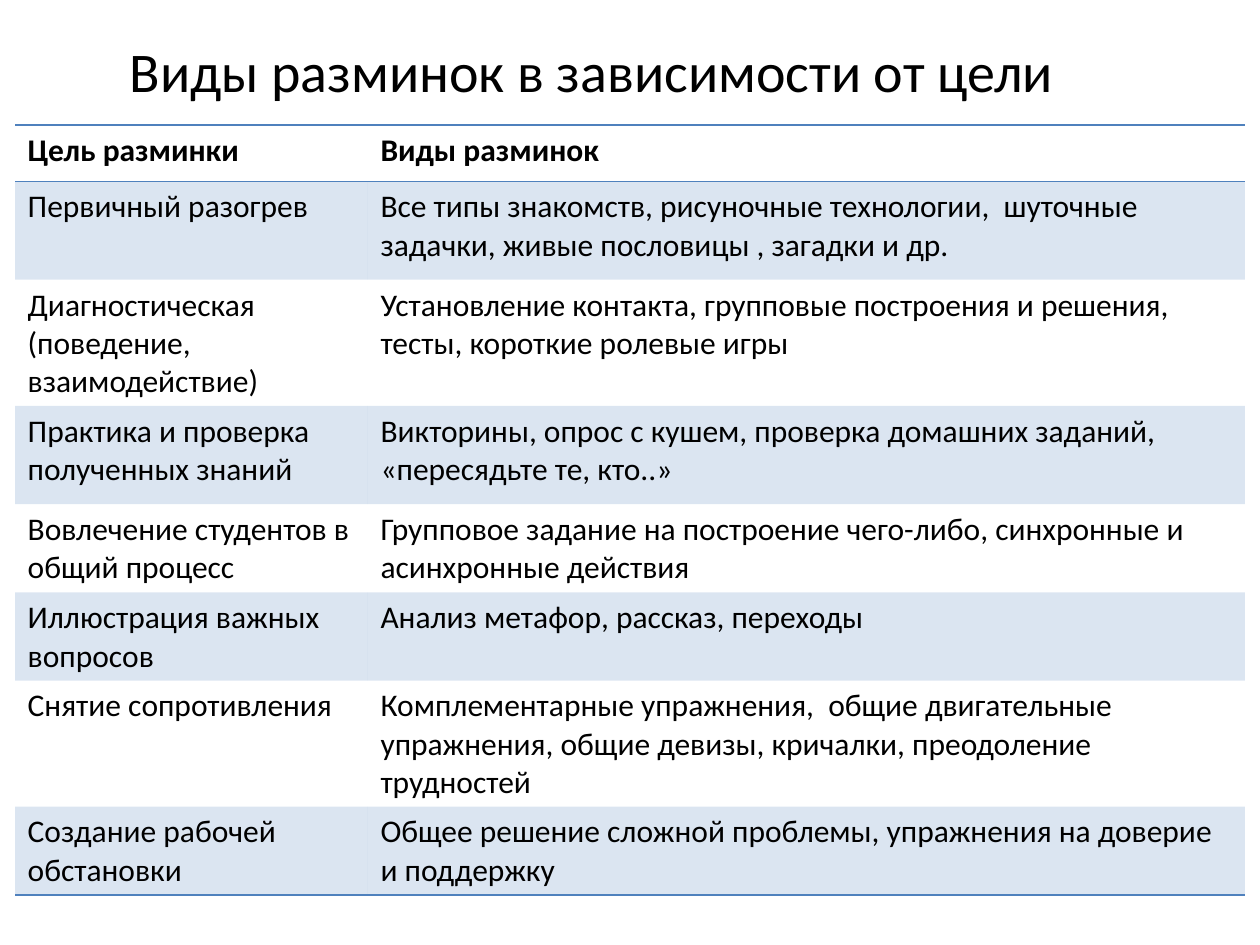
from lxml import etree
from pptx import Presentation
from pptx.dml.color import RGBColor
from pptx.enum.text import MSO_ANCHOR, PP_ALIGN
from pptx.oxml.ns import qn
from pptx.util import Inches, Pt

CENTER = PP_ALIGN.CENTER
MIDDLE = MSO_ANCHOR.MIDDLE
FONT = "Calibri"
INK = "000000"
ACCENT = "4F81BD"
BAND_ALPHA = 20
PLAIN_STYLE = "{2D5ABB26-0587-4C30-8999-92F81FD0307C}"

SLIDE_SIZE = (10, 7.5)
TITLE_BOX = (0.2, 0.21, 9, 0.69)
TABLE_BOX = (0.12, 0.99, 9.76, 6.12)
COLUMN_WIDTHS = (2.8, 6.96)
ROW_HEIGHTS = (0.45, 0.78, 0.89, 0.78, 0.64, 0.65, 0.94, 0.45)

TITLE = "Виды разминок в зависимости от цели"
WARMUPS = (
    ("Цель разминки", "Виды разминок"),
    ("Первичный разогрев",
     "Все типы знакомств, рисуночные технологии,  шуточные задачки, "
     "живые пословицы , загадки и др."),
    ("Диагностическая (поведение, взаимодействие)",
     "Установление контакта, групповые построения и решения, тесты, "
     "короткие ролевые игры"),
    ("Практика и проверка полученных знаний",
     "Викторины, опрос с кушем, проверка домашних заданий,  "
     "«пересядьте те, кто..»"),
    ("Вовлечение студентов в общий процесс",
     "Групповое задание на построение чего-либо, синхронные и "
     "асинхронные действия"),
    ("Иллюстрация важных вопросов", "Анализ метафор, рассказ, переходы"),
    ("Снятие сопротивления",
     "Комплементарные упражнения,  общие двигательные упражнения, "
     "общие девизы, кричалки, преодоление трудностей"),
    ("Создание рабочей обстановки",
     "Общее решение сложной проблемы, упражнения на доверие и поддержку"),
)


def rgb(value):
    """Turn a hex string into a colour."""
    return RGBColor.from_string(value)


def write(frame, text, size, bold=False):
    """Write one run of text and return its paragraph."""
    paragraph = frame.paragraphs[0]
    run = paragraph.add_run()
    run.text = text
    for name, value in {"name": FONT, "size": Pt(size), "bold": bold}.items():
        setattr(run.font, name, value)
    run.font.color.rgb = rgb(INK)
    return paragraph


def rule(cell, sides):
    """Draw accent rules on the given sides of a cell."""
    properties = cell._tc.get_or_add_tcPr()
    for position, side in enumerate(sides):
        line = etree.Element(qn(f"a:ln{side}"), w=str(Pt(1)))
        fill = etree.SubElement(line, qn("a:solidFill"))
        etree.SubElement(fill, qn("a:srgbClr"), val=ACCENT)
        properties.insert(position, line)


def shade(cell, banded):
    """Give a cell a translucent accent band or no fill."""
    if not banded:
        cell.fill.background()
        return
    cell.fill.solid()
    cell.fill.fore_color.rgb = rgb(ACCENT)
    tint = cell._tc.tcPr.find(".//" + qn("a:srgbClr"))
    etree.SubElement(tint, qn("a:alpha"), val=str(BAND_ALPHA * 1000))


def add_title(slide, box):
    """Place the centred heading in its box."""
    frame = slide.shapes.add_textbox(*map(Inches, box)).text_frame
    for name, value in {"word_wrap": True, "vertical_anchor": MIDDLE}.items():
        setattr(frame, name, value)
    write(frame, TITLE, 32).alignment = CENTER


def add_warmups(slide, box):
    """Place the table of warm-up goals and kinds in its box."""
    holder = slide.shapes.add_table(
        len(WARMUPS), len(COLUMN_WIDTHS), *map(Inches, box))
    table = holder.table
    table._tbl.tblPr.find(qn("a:tableStyleId")).text = PLAIN_STYLE
    for column, width in zip(table.columns, COLUMN_WIDTHS):
        column.width = Inches(width)
    for row, height in zip(table.rows, ROW_HEIGHTS):
        row.height = Inches(height)
    holder.height = Inches(box[3])

    ruled_sides = {0: "TB", len(WARMUPS) - 1: "B"}
    for index, (row, texts) in enumerate(zip(table.rows, WARMUPS)):
        for cell, text in zip(row.cells, texts):
            write(cell.text_frame, text, 18, bold=index == 0)
            shade(cell, index % 2 == 1)
            rule(cell, ruled_sides.get(index, ""))


def main():
    """Build and save the slide."""
    deck = Presentation()
    deck.slide_width, deck.slide_height = map(Inches, SLIDE_SIZE)
    slide = deck.slides.add_slide(deck.slide_layouts[6])
    add_title(slide, TITLE_BOX)
    add_warmups(slide, TABLE_BOX)
    deck.save("out.pptx")


if __name__ == "__main__":
    main()
